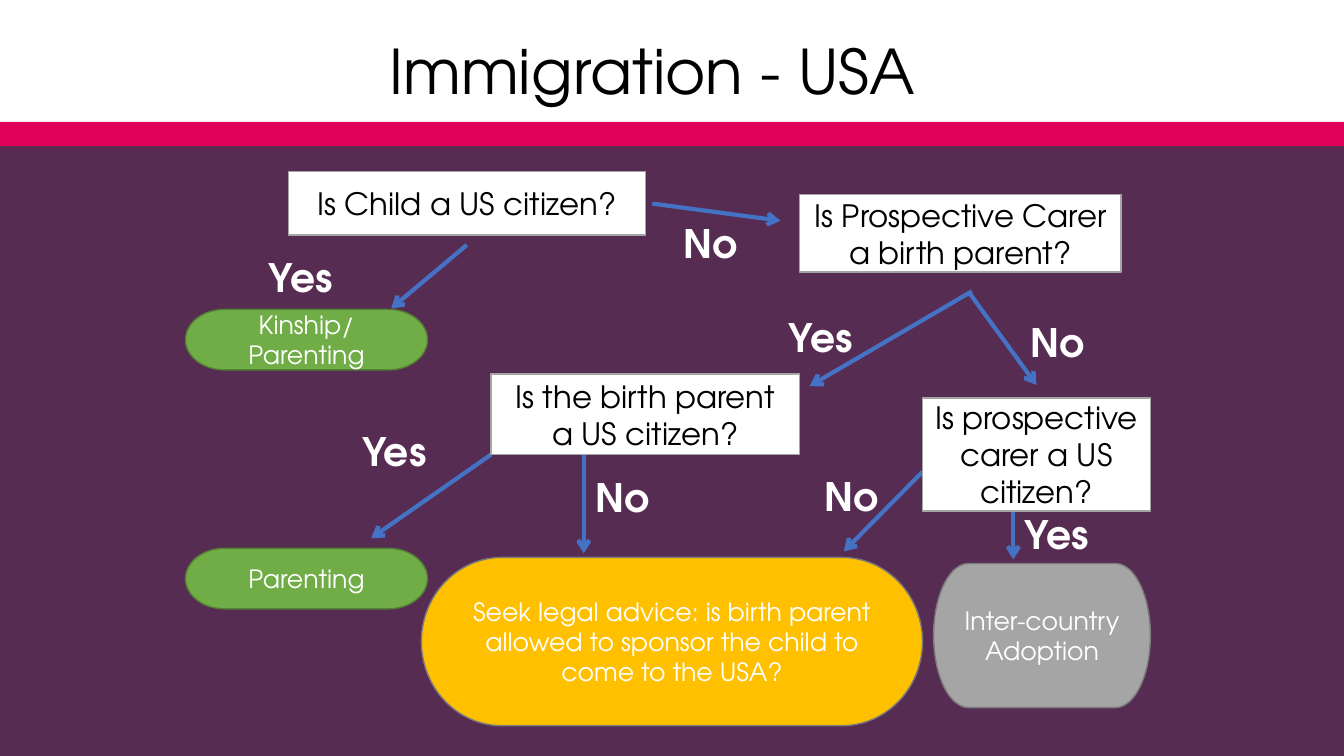
from typing import NamedTuple

from lxml import etree
from pptx import Presentation
from pptx import util as u
from pptx.dml.color import RGBColor
from pptx.enum import shapes as sh, text as tx
from pptx.oxml.ns import qn

PX = 9144  # EMU per px, 100 px to the inch
FONT = "TeX Gyre Adventor"
WHITE = RGBColor(0xFF, 0xFF, 0xFF)
BLACK = RGBColor(0x00, 0x00, 0x00)
PLUM = RGBColor(0x57, 0x2C, 0x52)
PINK = RGBColor(0xE0, 0x00, 0x5A)
BLUE = RGBColor(0x44, 0x72, 0xC4)
GREEN = RGBColor(0x70, 0xAD, 0x47)
MOSS = RGBColor(0x53, 0x80, 0x35)
GOLD = RGBColor(0xFF, 0xC0, 0x00)
GREY = RGBColor(0xA5, 0xA5, 0xA5)
SLATE = RGBColor(0x7A, 0x7A, 0x7A)

RECT = sh.MSO_SHAPE.RECTANGLE
STEP = sh.MSO_SHAPE.FLOWCHART_PROCESS
PILL = sh.MSO_SHAPE.FLOWCHART_TERMINATOR


class Box(NamedTuple):
    x: int
    y: int
    w: int
    h: int


class Query(NamedTuple):
    words: str
    box: Box


class Result(NamedTuple):
    words: str
    box: Box
    fill: RGBColor
    edge: RGBColor


class Arrow(NamedTuple):
    x1: int
    y1: int
    x2: int
    y2: int


class Label(NamedTuple):
    words: str
    x: int
    y: int


QUERIES = [
    Query("Is Child a US citizen?", Box(286, 170, 354, 63)),
    Query("Is Prospective Carer a birth parent?", Box(793, 193, 319, 77)),
    Query("Is the birth parent a US citizen?", Box(487, 371, 306, 80)),
    Query("Is prospective carer a US citizen?", Box(915, 395, 226, 112)),
]
RESULTS = [
    Result("Kinship/ Parenting", Box(184, 307, 240, 60), GREEN, MOSS),
    Result("Parenting", Box(184, 544, 240, 60), GREEN, MOSS),
    Result("Seek legal advice: is birth parent allowed to sponsor the child "
           "to come to the USA?", Box(418, 553, 497, 167), GOLD, SLATE),
    Result("Inter-country Adoption", Box(926, 559, 215, 143), GREY, SLATE),
]
ARROWS = [
    Arrow(463, 243, 388, 306),
    Arrow(647, 202, 774, 219),
    Arrow(964, 289, 803, 383),
    Arrow(961, 290, 1028, 382),
    Arrow(487, 451, 368, 534),
    Arrow(579, 450, 579, 549),
    Arrow(915, 468, 837, 547),
    Arrow(1005, 468, 1005, 555),
]
LABELS = [
    Label("Yes", 239, 246),
    Label("No", 640, 213),
    Label("Yes", 755, 306),
    Label("No", 984, 311),
    Label("Yes", 332, 419),
    Label("No", 553, 465),
    Label("No", 780, 464),
    Label("Yes", 989, 501),
]
WIDTHS = {"Yes": 118, "No": 129}


def emu(box: Box) -> list[int]:
    return [v * PX for v in box]


def write(shape, words: str, size: int, color: RGBColor, bold: bool = False,
          anchor=tx.MSO_ANCHOR.MIDDLE, space: float = 1.0) -> None:
    frame = shape.text_frame
    frame.word_wrap = True
    frame.vertical_anchor = anchor
    para = frame.paragraphs[0]
    para.alignment = tx.PP_ALIGN.CENTER
    para.line_spacing = space
    run = para.add_run()
    run.text = words
    font = run.font
    font.name, font.size, font.bold = FONT, u.Pt(size), bold
    font.color.rgb = color


def block(slide, kind, box: Box, fill: RGBColor, edge: RGBColor | None = None):
    shape = slide.shapes.add_shape(kind, *emu(box))
    shape.shadow.inherit = False
    shape.fill.solid()
    shape.fill.fore_color.rgb = fill
    if edge is None:
        shape.line.fill.background()
    else:
        shape.line.color.rgb = edge
        shape.line.width = u.Pt(1)
    return shape


def point(slide, arrow: Arrow) -> None:
    link = slide.shapes.add_connector(
        sh.MSO_CONNECTOR.STRAIGHT, *(v * PX for v in arrow))
    link.line.color.rgb = BLUE
    link.line.width = u.Pt(3)
    etree.SubElement(link.line._get_or_add_ln(), qn("a:tailEnd"), type="arrow")
    etree.SubElement(link._element.spPr, qn("a:effectLst"))


def tag(slide, label: Label) -> None:
    box = Box(label.x, label.y, WIDTHS[label.words], 57)
    shape = slide.shapes.add_textbox(*emu(box))
    write(shape, label.words, 28, WHITE, bold=True, anchor=tx.MSO_ANCHOR.TOP)
    shape.text_frame.auto_size = tx.MSO_AUTO_SIZE.SHAPE_TO_FIT_TEXT


def main() -> None:
    deck = Presentation()
    deck.slide_width, deck.slide_height = u.Inches(13.33), u.Inches(7.5)
    slide = deck.slides.add_slide(deck.slide_layouts[6])
    slide.background.fill.solid()
    slide.background.fill.fore_color.rgb = PLUM

    # Title band
    block(slide, RECT, Box(0, -4, 1333, 145), WHITE, WHITE)
    title = slide.shapes.add_textbox(*emu(Box(72, 1, 1150, 145)))
    write(title, "Immigration - USA", 44, BLACK, space=0.9)
    block(slide, RECT, Box(0, 121, 1333, 24), PINK)

    # Flow chart: arrows lie behind the boxes, labels on top
    for arrow in ARROWS:
        point(slide, arrow)
    for query in QUERIES:
        write(block(slide, STEP, query.box, WHITE, GREY),
              query.words, 22, BLACK)
    for result in RESULTS:
        write(block(slide, PILL, result.box, result.fill, result.edge),
              result.words, 18, WHITE)
    for label in LABELS:
        tag(slide, label)

    deck.save("out.pptx")


if __name__ == "__main__":
    main()
